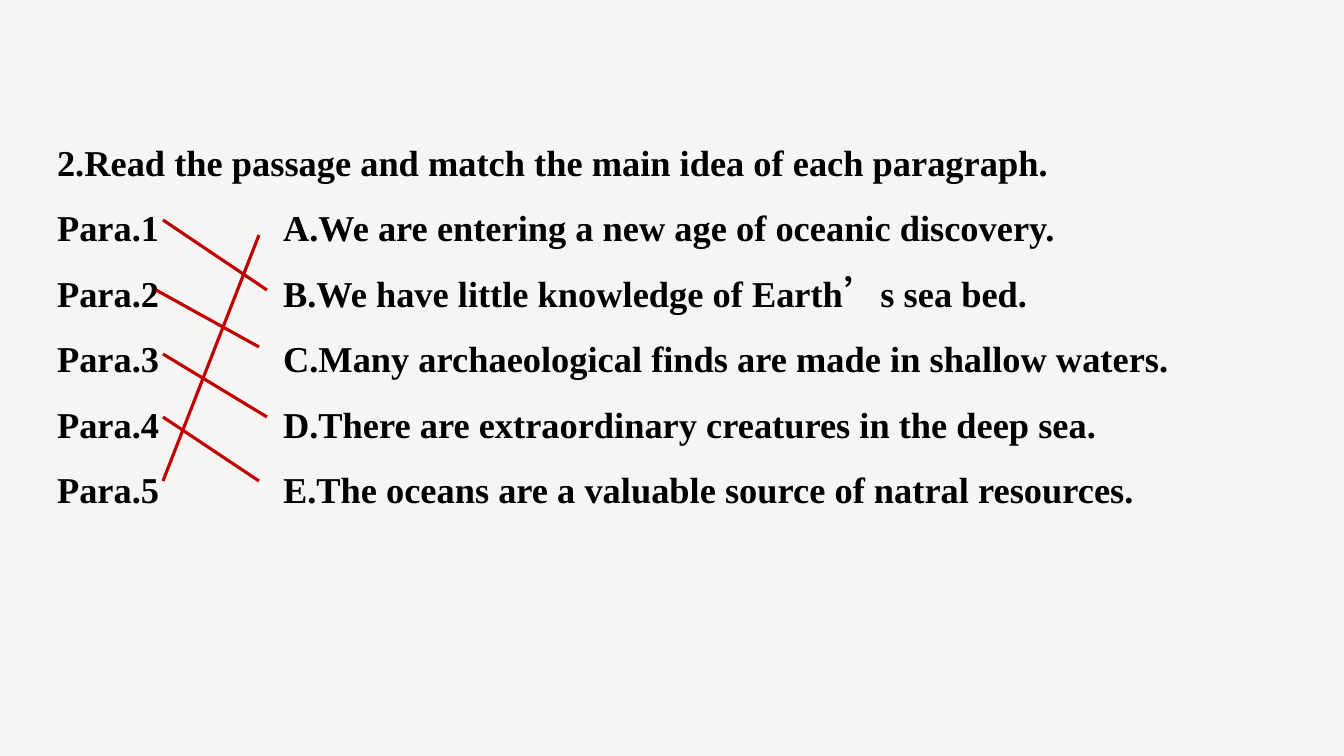
from lxml.etree import SubElement
from pptx import Presentation
from pptx.dml.color import RGBColor
from pptx.enum.shapes import MSO_CONNECTOR
from pptx.enum.text import MSO_AUTO_SIZE, PP_ALIGN
from pptx.oxml.ns import qn
from pptx.util import Pt

TASK = "2.Read the passage and match the main idea of each paragraph."
IDEAS = [
    ("Para.1", "A.We are entering a new age of oceanic discovery."),
    ("Para.2", "B.We have little knowledge of Earth’s sea bed."),
    ("Para.3", "C.Many archaeological finds are made in shallow waters."),
    ("Para.4", "D.There are extraordinary creatures in the deep sea."),
    ("Para.5", "E.The oceans are a valuable source of natral resources."),
]
MATCHES = [
    (163, 220, 267, 290),
    (156, 290, 259, 347),
    (163, 354, 267, 417),
    (163, 417, 259, 481),
    (163, 481, 259, 235),
]
COLORS = {"paper": "F7F5F3", "text": "000000", "match": "C00000"}
LATIN, CJK = "Times New Roman", "Noto Sans CJK SC"
APOSTROPHE = "’"
SLIDE = (1344, 756)
EXERCISE = (44, 111, 1256, 402)
IDEA_TAB = 226
FRAME = {
    "margin_left": 13, "margin_right": 13,
    "margin_top": 7, "margin_bottom": 7,
}


def px(length):
    return round(length * 914400 / 100.8)


def color(name):
    return RGBColor.from_string(COLORS[name])


def add_words(line, words, face):
    run = line.add_run()
    run.text = words
    style = {"name": face, "size": Pt(26), "bold": True}
    for key, value in style.items():
        setattr(run.font, key, value)
    run.font.color.rgb = color("text")
    SubElement(run.font._element, qn("a:ea")).set("typeface", CJK)


def add_line(line, words):
    tabs = SubElement(line._p.get_or_add_pPr(), qn("a:tabLst"))
    SubElement(tabs, qn("a:tab"), pos=str(px(IDEA_TAB)), algn="l")
    line.alignment = PP_ALIGN.JUSTIFY
    line.line_spacing = 1.5
    before, mark, after = words.partition(APOSTROPHE)
    for part, face in ((before, LATIN), (mark, CJK), (after, LATIN)):
        if part:
            add_words(line, part, face)


def add_exercise(slide):
    frame = slide.shapes.add_textbox(*map(px, EXERCISE)).text_frame
    frame.word_wrap = True
    frame.auto_size = MSO_AUTO_SIZE.SHAPE_TO_FIT_TEXT
    for key, value in FRAME.items():
        setattr(frame, key, px(value))
    lines = [TASK] + [f"{para}\t{idea}" for para, idea in IDEAS]
    for index, words in enumerate(lines):
        add_line(frame.add_paragraph() if index else frame.paragraphs[0], words)


def add_match(slide, ends):
    match = slide.shapes.add_connector(MSO_CONNECTOR.STRAIGHT, *map(px, ends))
    match.line.color.rgb = color("match")
    match.line.width = Pt(2.25)
    SubElement(match._element.spPr, qn("a:effectLst"))


def main():
    deck = Presentation()
    deck.slide_width, deck.slide_height = map(px, SLIDE)
    slide = deck.slides.add_slide(deck.slide_layouts[6])
    slide.background.fill.solid()
    slide.background.fill.fore_color.rgb = color("paper")
    add_exercise(slide)
    for ends in MATCHES:
        add_match(slide, ends)
    deck.save("out.pptx")


if __name__ == "__main__":
    main()
